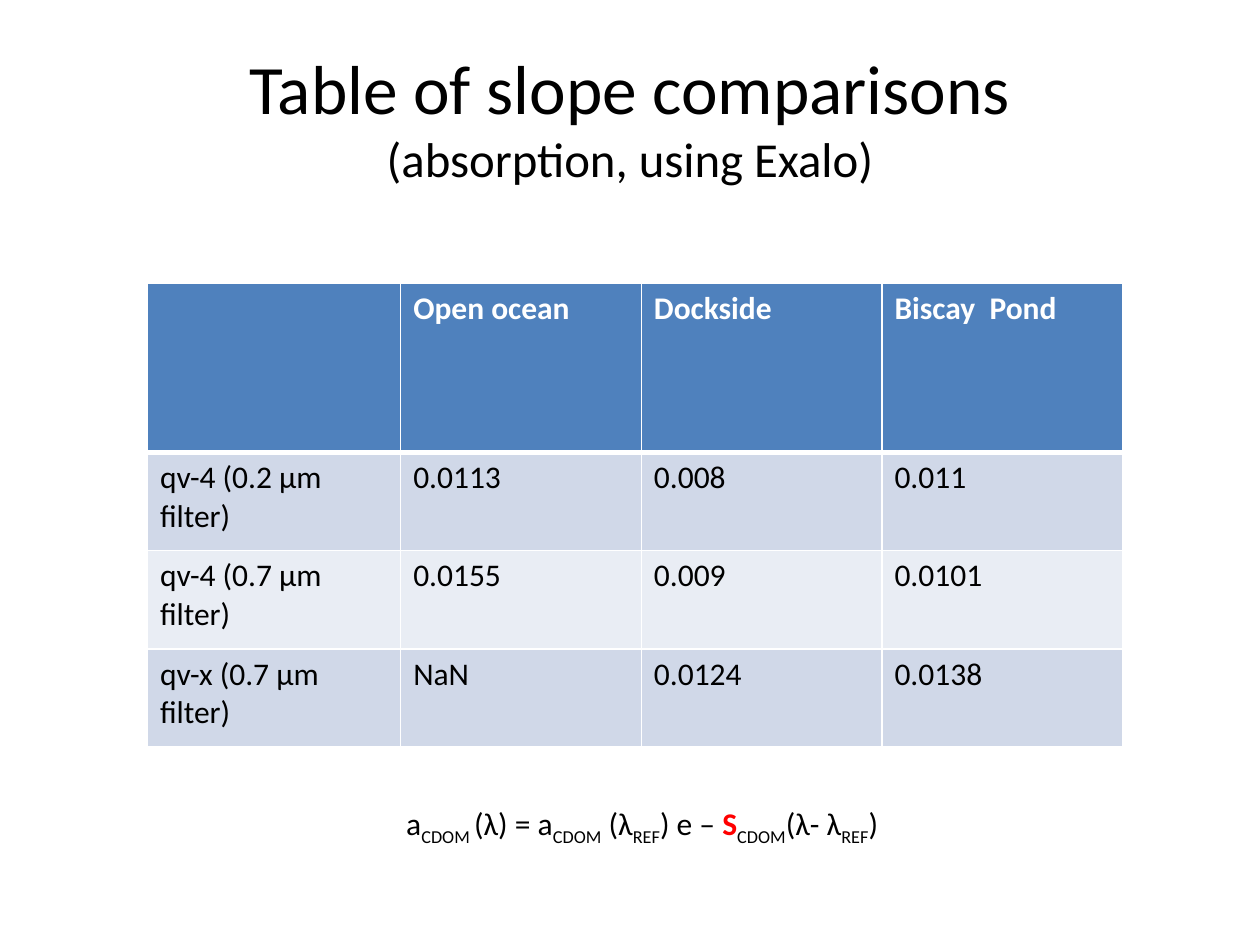
from dataclasses import dataclass

from lxml import etree
from pptx import Presentation
from pptx.dml.color import RGBColor
from pptx.enum import text as txt
from pptx.oxml import ns
from pptx.util import Inches, Pt

FONT = "Calibri"
BLACK, WHITE, RED = "000000", "FFFFFF", "FF0000"
HEADER_FILL, BAND_FILLS = "4F81BD", ("D0D8E8", "E9EDF4")


@dataclass
class Piece:
    text: str
    size: float = 18
    color: str = BLACK
    bold: bool = False
    subscript: bool = False


def rgb(color: str) -> RGBColor:
    return RGBColor.from_string(color)


def add_piece(paragraph, piece: Piece) -> None:
    run = paragraph.add_run()
    run.text = piece.text
    font = run.font
    font.name, font.size, font.bold = FONT, Pt(piece.size), piece.bold
    font.color.rgb = rgb(piece.color)
    if piece.subscript:
        font._element.set("baseline", "-25000")


def add_centered_box(slide, left: float, top: float, width: float, height: float,
                     anchor=txt.MSO_ANCHOR.TOP):
    """Add a wrapping text box and return its centred paragraph."""
    frame = slide.shapes.add_textbox(
        Inches(left), Inches(top), Inches(width), Inches(height)).text_frame
    frame.word_wrap = True
    frame.vertical_anchor = anchor
    paragraph = frame.paragraphs[0]
    paragraph.alignment = txt.PP_ALIGN.CENTER
    return paragraph


def set_borders(cell, widths: dict[str, float]) -> None:
    properties = cell._tc.get_or_add_tcPr()
    for position, (side, width) in enumerate(widths.items()):
        line = etree.Element(ns.qn(f"a:ln{side}"), w=str(Pt(width)))
        fill = etree.SubElement(line, ns.qn("a:solidFill"))
        etree.SubElement(fill, ns.qn("a:srgbClr"), val=WHITE)
        properties.insert(position, line)


def fill_cell(cell, content: str, row: int) -> None:
    header = row == 0
    cell.fill.solid()
    cell.fill.fore_color.rgb = rgb(HEADER_FILL if header else BAND_FILLS[(row - 1) % 2])
    set_borders(cell, {"L": 1, "R": 1, "T": 3 if row == 1 else 1, "B": 3 if header else 1})
    if content:
        add_piece(cell.text_frame.paragraphs[0],
                  Piece(content, color=WHITE if header else BLACK, bold=header))


def main() -> None:
    prs = Presentation()
    prs.slide_width, prs.slide_height = Inches(10), Inches(7.5)
    slide = prs.slides.add_slide(prs.slide_layouts[6])

    # Title
    title = add_centered_box(slide, 0.5, 0.3, 9, 1.25, txt.MSO_ANCHOR.MIDDLE)
    add_piece(title, Piece("Table of slope comparisons", 39.6))
    title.add_line_break()
    add_piece(title, Piece("(absorption, using Exalo)", 27.9))

    # Slope table
    slopes = [
        ("", "Open ocean", "Dockside", "Biscay  Pond"),
        ("qv-4 (0.2 µm filter)", "0.0113", "0.008", "0.011"),
        ("qv-4 (0.7 µm filter)", "0.0155", "0.009", "0.0101"),
        ("qv-x (0.7 µm filter)", "NaN", "0.0124", "0.0138"),
    ]
    table = slide.shapes.add_table(
        len(slopes), len(slopes[0]),
        Inches(1.17), Inches(2.25), Inches(7.75), Inches(3.67)).table
    for column, width in zip(table.columns, [2.01] + [1.91] * 3):
        column.width = Inches(width)
    for row, height in zip(table.rows, [1.34] + [0.78] * 3):
        row.height = Inches(height)
    for r, values in enumerate(slopes):
        for c, value in enumerate(values):
            fill_cell(table.cell(r, c), value, r)

    # Absorption equation
    equation = add_centered_box(slide, 1, 6.33, 8.25, 0.4)
    reference = Piece("REF", subscript=True)
    cdom = Piece("CDOM", subscript=True)
    for piece in (
        Piece("a"), Piece("CDOM ", subscript=True), Piece("(λ) = a"), cdom,
        Piece(" (λ"), reference, Piece(") e – "),
        Piece("S", color=RED, bold=True), cdom,
        Piece("(λ- λ"), reference, Piece(") "),
    ):
        add_piece(equation, piece)

    prs.save("out.pptx")


if __name__ == "__main__":
    main()
